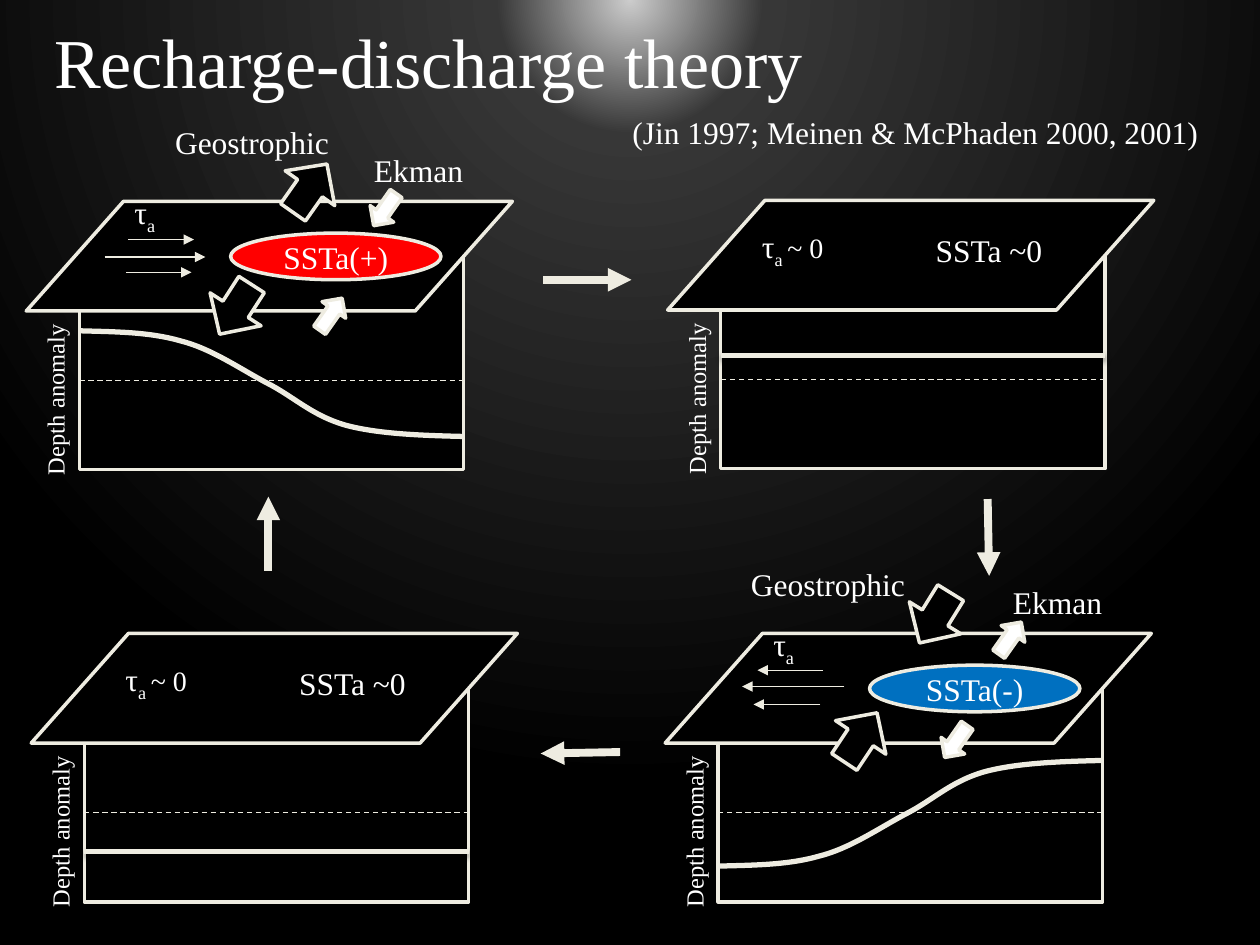
from dataclasses import dataclass
from typing import NamedTuple

from lxml.etree import SubElement
from pptx import Presentation
from pptx.dml.color import RGBColor
from pptx.enum.dml import MSO_LINE_DASH_STYLE as Dash
from pptx.enum.shapes import MSO_CONNECTOR as Connector, MSO_SHAPE as Shape
from pptx.enum.text import MSO_ANCHOR as Anchor, MSO_AUTO_SIZE as AutoSize, PP_ALIGN as Align
from pptx.oxml import parse_xml
from pptx.oxml.ns import nsdecls, qn
from pptx.util import Cm, Pt

COLORS = {"outline": "EEECE1", "panel": "000000", "text": "FFFFFF",
          "warm": "FF0000", "cold": "0070C0"}
FONT = "Times New Roman"
GRADIENT_STOPS = ((0, "CCCCCC"), (17, "373737"), (100, "000000"))
PANEL_WIDTH, PANEL_HEIGHT = 7.75, 4.34
MEAN_DEPTH, CURVE_MIDDLE = 2.54, 2.58
THERMOCLINE = ((0.03, -1.04), (0.71, -1.02), (1.4, -1.02), (2.03, -0.84), (2.64, -0.69),
               (3.2, -0.3), (3.76, 0), (4.32, 0.28), (4.67, 0.66), (5.36, 0.86),
               (6.02, 1.04), (6.91, 1.07), (7.77, 1.09))
GEOSTROPHIC_SIZE, EKMAN_SIZE = (1.22, 1.19), (0.58, 0.79)


class Box(NamedTuple):
    left: float
    top: float
    width: float
    height: float


class TextRun(NamedTuple):
    text: str
    size: int = 18
    subscript: bool = False


class Line(NamedTuple):
    start_x: float
    start_y: float
    end_x: float
    end_y: float


class Transport(NamedTuple):
    left: float
    top: float
    rotation: float


@dataclass
class Panel:
    left: float
    top: float


@dataclass
class NeutralPanel(Panel):
    depth: float


@dataclass
class AnomalyPanel(Panel):
    label: str
    color: str
    slope: int
    winds: tuple
    geostrophic: tuple
    ekman: tuple
    geostrophic_label: tuple


def rgb(name: str) -> RGBColor:
    return RGBColor.from_string(COLORS[name])


def add_runs(frame, runs, align=Align.LEFT) -> None:
    paragraph = frame.paragraphs[0]
    paragraph.alignment = align
    for item in runs:
        run = paragraph.add_run()
        run.text = item.text
        run.font.name = FONT
        run.font.size = Pt(item.size)
        run.font.color.rgb = rgb("text")
        if item.subscript:
            run._r.get_or_add_rPr().set("baseline", "-25000")


def add_label(shapes, box: Box, *runs: TextRun, align=Align.LEFT, rotation: float = 0) -> None:
    label = shapes.add_textbox(*map(Cm, box))
    label.rotation = rotation
    frame = label.text_frame
    frame.word_wrap = False
    frame.auto_size = AutoSize.SHAPE_TO_FIT_TEXT
    add_runs(frame, runs, align)


def add_outlined(shapes, kind, box: Box, color: str, rotation: float = 0):
    shape = shapes.add_shape(kind, *map(Cm, box))
    shape.shadow.inherit = False
    shape.rotation = rotation
    shape.fill.solid()
    shape.fill.fore_color.rgb = rgb(color)
    shape.line.color.rgb = rgb("outline")
    shape.line.width = Pt(2)
    return shape


def add_line(shapes, line: Line, width: float, dashed: bool = False,
             arrow: bool = False, shadow: bool = False) -> None:
    connector = shapes.add_connector(Connector.STRAIGHT, *map(Cm, line))
    connector.line.color.rgb = rgb("outline")
    connector.line.width = Pt(width)
    if dashed:
        connector.line.dash_style = Dash.DASH
    properties = connector._element.spPr
    if arrow:
        SubElement(properties.find(qn("a:ln")), qn("a:tailEnd"), type="triangle")
    effects = SubElement(properties, qn("a:effectLst"))
    if shadow:
        outer = SubElement(effects, qn("a:outerShdw"), blurRad=str(Pt(3.1)),
                           dist=str(Pt(1.8)), dir="5400000", rotWithShape="0")
        tint = SubElement(outer, qn("a:srgbClr"), val=COLORS["panel"])
        SubElement(tint, qn("a:alpha"), val="35000")


def add_thermocline(shapes, panel: AnomalyPanel) -> None:
    points = [(Cm(panel.left + x), Cm(panel.top + CURVE_MIDDLE + panel.slope * y))
              for x, y in THERMOCLINE]
    builder = shapes.build_freeform(*points[0])
    builder.add_line_segments(points[1:], close=False)
    curve = builder.convert_to_shape()
    curve.shadow.inherit = False
    curve.fill.background()
    curve.line.color.rgb = rgb("outline")
    curve.line.width = Pt(3)
    path = curve._element.find(".//" + qn("a:path"))
    segments = path.findall(qn("a:lnTo"))
    for first in range(0, len(segments), 3):
        bezier = SubElement(path, qn("a:cubicBezTo"))
        for segment in segments[first:first + 3]:
            bezier.append(segment[0])
            path.remove(segment)


def add_panel(slide, panel: Panel) -> None:
    shapes = slide.shapes.add_group_shape().shapes
    x, y = panel.left, panel.top
    right = x + PANEL_WIDTH
    add_outlined(shapes, Shape.RECTANGLE, Box(x, y, PANEL_WIDTH, PANEL_HEIGHT), "panel")
    add_outlined(shapes, Shape.FLOWCHART_DATA, Box(x - 1.07, y - 1.07, 9.8, 2.21), "panel")
    add_line(shapes, Line(x, y + MEAN_DEPTH, right, y + MEAN_DEPTH), 0.75, dashed=True)
    if isinstance(panel, NeutralPanel):
        add_label(shapes, Box(x + 0.58, y - 0.66, 1.8, 1.02),
                  TextRun("τ"), TextRun("a ", subscript=True), TextRun("~ 0", 16))
        add_label(shapes, Box(x + 4.06, y - 0.58, 2.69, 1.02), TextRun("SSTa ~0"),
                  align=Align.CENTER)
        depth = y + panel.depth
        add_line(shapes, Line(x, depth, right, depth), 3, shadow=True)
    else:
        add_anomaly(shapes, panel)
    add_label(shapes, Box(x - 2.29, y + 2.46, 3.61, 0.86), TextRun("Depth anomaly", 14),
              rotation=270)


def add_anomaly(shapes, panel: AnomalyPanel) -> None:
    x, y = panel.left, panel.top
    ellipse = add_outlined(shapes, Shape.OVAL, Box(x + 3.05, y - 0.43, 4.24, 0.94), panel.color)
    ellipse.text_frame.vertical_anchor = Anchor.MIDDLE
    add_runs(ellipse.text_frame, [TextRun(panel.label)], Align.CENTER)
    for start, end, height in panel.winds:
        add_line(shapes, Line(x + start, y + height, x + end, y + height), 0.75, arrow=True)
    add_thermocline(shapes, panel)
    add_label(shapes, Box(x + 0.86, y - 1.37, 0.97, 1.02),
              TextRun("τ"), TextRun("a", subscript=True))
    for arrows, size, color in ((panel.geostrophic, GEOSTROPHIC_SIZE, "panel"),
                                (panel.ekman, EKMAN_SIZE, "text")):
        for arrow in arrows:
            add_outlined(shapes, Shape.UP_ARROW, Box(x + arrow.left, y + arrow.top, *size),
                         color, arrow.rotation)
    label_x, label_y = panel.geostrophic_label
    add_label(shapes, Box(x + label_x, y + label_y, 3.68, 1.02), TextRun("Geostrophic"))
    add_label(shapes, Box(x + 5.69, y - 2.21, 2.34, 1.02), TextRun("Ekman"))


def set_background(slide) -> None:
    slide.background.fill.solid()
    properties = slide.element.find(".//" + qn("p:bgPr"))
    stops = "".join(f'<a:gs pos="{position * 1000}"><a:srgbClr val="{color}"/></a:gs>'
                    for position, color in GRADIENT_STOPS)
    properties.replace(properties[0], parse_xml(
        f'<a:gradFill {nsdecls("a")} rotWithShape="1"><a:gsLst>{stops}</a:gsLst>'
        '<a:path path="circle"><a:fillToRect l="50000" t="-80000" r="50000" b="180000"/>'
        '</a:path></a:gradFill>'))


CYCLE_ARROWS = (Line(10.95, 5.64, 12.73, 5.64), Line(19.91, 10.06, 19.94, 11.61),
                Line(12.5, 15.16, 10.9, 15.19), Line(5.41, 11.51, 5.41, 10.01))
PANELS = (
    AnomalyPanel(14.48, 13.84, "SSTa(-)", "cold", -1,
                 ((2.54, 0.48, 0), (2.11, 0.79, -0.33), (2.06, 0.71, 0.36)),
                 (Transport(3.76, -1.98, 211.8), Transport(2.26, 0.43, 33.7)),
                 (Transport(5.59, -1.37, 35.1), Transport(4.5, 0.71, 215.1)), (0.41, -2.57)),
    NeutralPanel(1.7, 13.84, 3.33),
    NeutralPanel(14.53, 5.11, 2.06),
    AnomalyPanel(1.6, 5.13, "SSTa(+)", "warm", 1,
                 ((0.51, 2.54, 0.05), (0.94, 2.26, 0.36), (0.99, 2.31, -0.3)),
                 (Transport(4.04, -1.93, 35.1), Transport(2.54, 0.51, 212.8)),
                 (Transport(5.87, -1.3, 215.1), Transport(4.78, 0.81, 35.1)), (1.68, -2.77)),
)


def main() -> None:
    presentation = Presentation()
    presentation.slide_width, presentation.slide_height = Cm(25.4), Cm(19.05)
    slide = presentation.slides.add_slide(presentation.slide_layouts[6])
    set_background(slide)
    for arrow in CYCLE_ARROWS:
        add_line(slide.shapes, arrow, 4.5, arrow=True)
    for panel in PANELS:
        add_panel(slide, panel)
    add_label(slide.shapes, Box(0.84, 0.25, 15.77, 1.96), TextRun("Recharge-discharge theory", 40))
    add_label(slide.shapes, Box(12.5, 2.16, 12.04, 1.02),
              TextRun("(Jin 1997; Meinen & McPhaden 2000, 2001)"))
    presentation.save("out.pptx")


if __name__ == "__main__":
    main()
